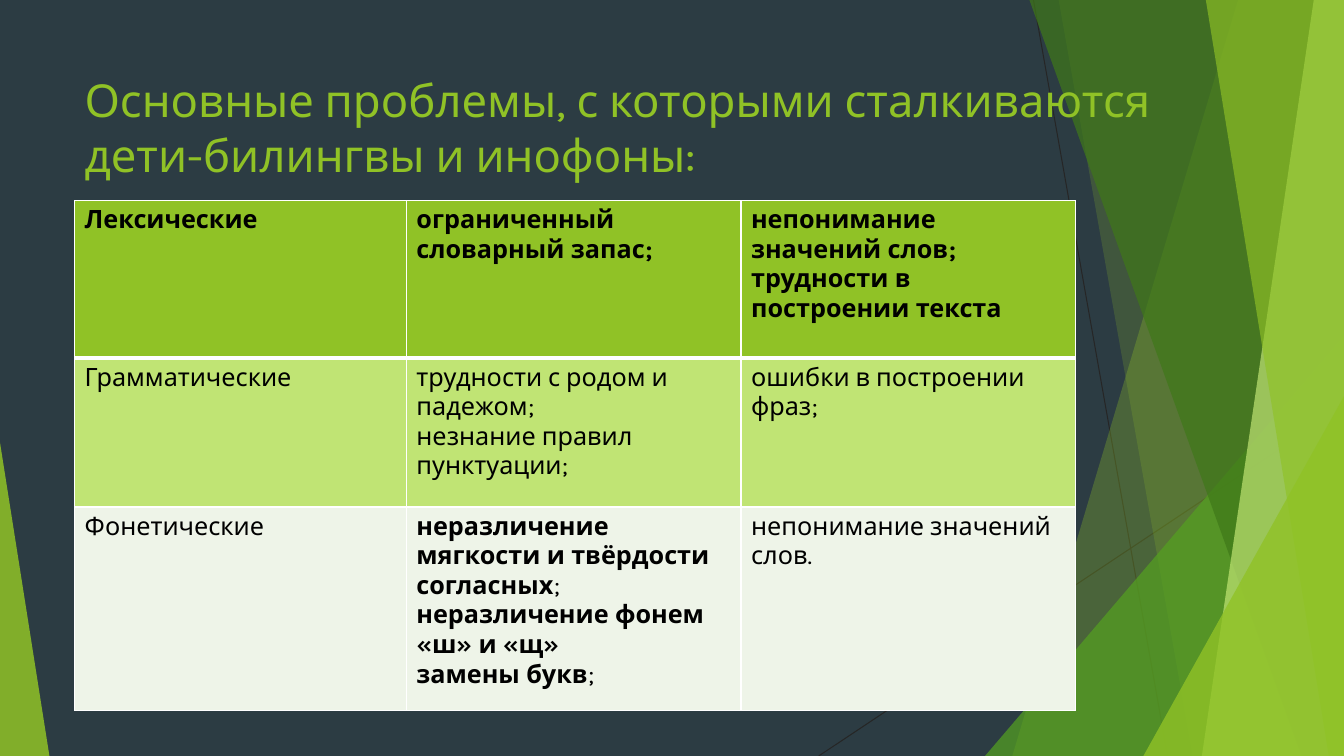
"""Build a slide on the language problems of bilingual children."""
import pptx
import pptx.dml.color
import pptx.enum.shapes
import pptx.enum.text
import pptx.oxml
import pptx.oxml.ns
import pptx.util

Inches = pptx.util.Inches
Pt = pptx.util.Pt
RGBColor = pptx.dml.color.RGBColor
Kind = pptx.enum.shapes.MSO_SHAPE

SLATE = RGBColor(0x2C, 0x3C, 0x43)
DARK = RGBColor(0x26, 0x26, 0x26)
LIME = RGBColor(0x90, 0xC2, 0x26)
GREEN = RGBColor(0x54, 0xA0, 0x21)
MOSS = RGBColor(0x3F, 0x78, 0x19)
PALE = RGBColor(0xC0, 0xE4, 0x74)
MIST = RGBColor(0xEE, 0xF4, 0xE8)
BLACK = RGBColor(0, 0, 0)
WIDTH, HEIGHT = 13.33, 7.5
FONT = "Karla"
NS = pptx.oxml.ns.nsdecls("a")

TITLE = "Основные проблемы, с которыми сталкиваются дети-билингвы и инофоны:"
LINES = [((10.25, 0), (11.58, 7.5)), ((13.33, 4.03), (8.12, 7.5))]
BACK = [(12.28, 10.04, LIME, 30), (10.5, 11.83, LIME, 20)]
FRONT = [(10.21, 12.91, MOSS, 70), (13.03, 11.92, PALE, 70), (11.96, 13.18, LIME, 65)]
COLS = [3.29, 3.32, 3.32]
ROWS = [(1.56, LIME), (1.48, PALE), (2.02, MIST)]
CELLS = [
    [
        [[("Лексические", True)]],
        [[("ограниченный словарный запас;", True)]],
        [[("непонимание значений слов;", True)], [("трудности в построении текста", True)]],
    ],
    [
        [[("Грамматические", False)]],
        [[("трудности с родом и падежом;", False)], [("незнание правил пунктуации;", False)]],
        [[("ошибки в построении фраз;", False)]],
    ],
    [
        [[("Фонетические", False)]],
        [
            [("неразличение мягкости и твёрдости согласных", True), (";", False)],
            [("неразличение фонем «ш» и «щ»", True)],
            [("замены букв", True), (";", False)],
        ],
        [[("непонимание значений слов.", False)]],
    ],
]


def put(item, form):
    """Set each attribute in a dict of format values."""
    for name, value in form.items():
        setattr(item, name, value)


def write(para, text, size, color, bold=False):
    """Add a run of text to a paragraph."""
    run = para.add_run()
    run.text = text
    put(run.font, {"name": FONT, "size": Pt(size), "bold": bold})
    run.font.color.rgb = color


def tint(shape, color, alpha):
    """Fill a shape with a partly clear colour and no line."""
    shape.shadow.inherit = False
    shape.line.fill.background()
    shape.fill.solid()
    shape.fill.fore_color.rgb = color
    node = shape.fill._xPr.find(".//" + pptx.oxml.ns.qn("a:srgbClr"))
    node.append(pptx.oxml.parse_xml(f'<a:alpha {NS} val="{alpha * 1000}"/>'))


def add_line(slide, start, end):
    """Draw a thin dark line."""
    ends = [Inches(value) for value in (*start, *end)]
    line = slide.shapes.add_connector(pptx.enum.shapes.MSO_CONNECTOR.STRAIGHT, *ends)
    line.line.color.rgb = DARK
    line.line.width = Pt(0.75)
    line._element.spPr.append(pptx.oxml.parse_xml(f"<a:effectLst {NS}/>"))


def add_band(slide, top, base, color, alpha):
    """Draw a slanted band that runs to the right edge."""
    spots = [(WIDTH, 0), (WIDTH, HEIGHT), (base, HEIGHT)]
    pen = slide.shapes.build_freeform(Inches(top), 0)
    pen.add_line_segments([(Inches(x), Inches(y)) for x, y in spots])
    tint(pen.convert_to_shape(), color, alpha)


def add_wedge(slide, left, top, width, apex, color, alpha):
    """Draw a triangle that stands on the bottom edge."""
    box = [Inches(value) for value in (left, top, width, HEIGHT - top)]
    shape = slide.shapes.add_shape(Kind.ISOSCELES_TRIANGLE, *box)
    shape.adjustments[0] = apex
    tint(shape, color, alpha)


def add_title(slide):
    """Add the heading."""
    box = [Inches(value) for value in (0.74, 0.67, 10.79, 1.53)]
    frame = slide.shapes.add_textbox(*box).text_frame
    put(frame, {"word_wrap": True, "vertical_anchor": pptx.enum.text.MSO_ANCHOR.TOP})
    write(frame.paragraphs[0], TITLE, 32.4, LIME)


def edge(cell, row):
    """Give a cell white borders, thick under the header."""
    sides = {"L": 1, "R": 1, "T": 3 if row == 1 else 1, "B": 3 if row == 0 else 1}
    props = cell._tc.get_or_add_tcPr()
    for spot, (side, width) in enumerate(sides.items()):
        props.insert(spot, pptx.oxml.parse_xml(
            f'<a:ln{side} {NS} w="{Pt(width)}"><a:solidFill>'
            f'<a:srgbClr val="FFFFFF"/></a:solidFill></a:ln{side}>'))


def add_grid(slide):
    """Add the table of problems."""
    box = [Inches(value) for value in (0.74, 1.99, sum(COLS), sum(row[0] for row in ROWS))]
    table = slide.shapes.add_table(len(ROWS), len(COLS), *box).table
    for col, width in zip(table.columns, COLS):
        col.width = Inches(width)
    for r, (height, color) in enumerate(ROWS):
        table.rows[r].height = Inches(height)
        for c, paras in enumerate(CELLS[r]):
            cell = table.cell(r, c)
            cell.fill.solid()
            cell.fill.fore_color.rgb = color
            edge(cell, r)
            frame = cell.text_frame
            for n, runs in enumerate(paras):
                para = frame.add_paragraph() if n else frame.paragraphs[0]
                for text, bold in runs:
                    write(para, text, 18, BLACK, bold)


def main():
    """Build and save the slide."""
    deck = pptx.Presentation()
    put(deck, {"slide_width": Inches(WIDTH), "slide_height": Inches(HEIGHT)})
    slide = deck.slides.add_slide(deck.slide_layouts[6])
    slide.background.fill.solid()
    slide.background.fill.fore_color.rgb = SLATE
    for start, end in LINES:
        add_line(slide, start, end)
    for band in BACK:
        add_band(slide, *band)
    add_wedge(slide, 9.77, 3.33, 3.56, 1, GREEN, 72)
    for band in FRONT:
        add_band(slide, *band)
    add_wedge(slide, 11.34, 3.93, 1.99, 1, LIME, 80)
    add_wedge(slide, 0, 4.39, 0.49, 0, LIME, 85)
    add_title(slide)
    add_grid(slide)
    deck.save("out.pptx")


if __name__ == "__main__":
    main()
